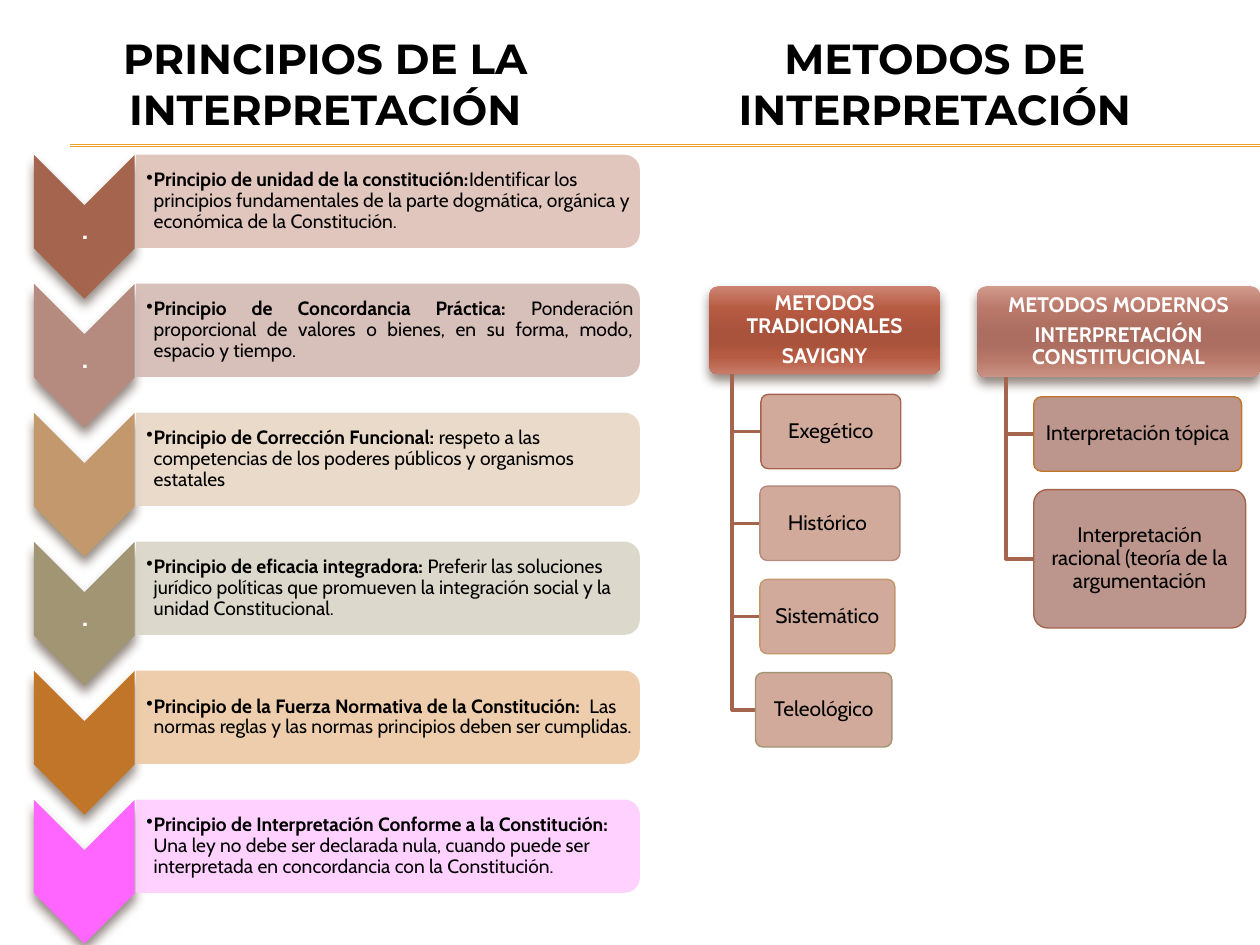
from lxml.etree import SubElement
from pptx import Presentation
from pptx.dml.color import RGBColor
from pptx.enum.shapes import MSO_CONNECTOR, MSO_SHAPE
from pptx.enum.text import MSO_ANCHOR as Anchor, MSO_AUTO_SIZE, PP_ALIGN as Align
from pptx.oxml.ns import qn
from pptx.util import Cm, Pt

BLACK = RGBColor(0x00, 0x00, 0x00)
WHITE = RGBColor(0xFF, 0xFF, 0xFF)
GOLD = RGBColor(0xF0, 0xA2, 0x2E)
BROWN = RGBColor(0xA5, 0x64, 0x4E)
ROSE = RGBColor(0xB5, 0x8B, 0x80)
TAN = RGBColor(0xC3, 0x98, 0x6D)
OLIVE = RGBColor(0xA1, 0x95, 0x74)
ORANGE = RGBColor(0xC1, 0x75, 0x29)
MAGENTA = RGBColor(0xFF, 0x66, 0xFF)
SALMON = RGBColor(0xCC, 0xA1, 0x92)
SHADOW = RGBColor(0x4E, 0x3B, 0x30)
PALE = [RGBColor.from_string(code) for code in
        ("DDC0B6", "D3B9B3", "E7D6C5", "D9D5C7", "ECC8A4", "FFCCFF")]
STOPS = (0, 25, 50, 65, 80, 100)
RED_GRADIENT = [RGBColor.from_string(code) for code in
                ("CD8473", "B75B42", "AA533C", "AA533C", "B65B42", "C77D6B")]
ROSE_GRADIENT = [RGBColor.from_string(code) for code in
                 ("D09A8D", "B97869", "AB6E60", "AB6E60", "B87868", "CA9386")]

BODY_FONT, TITLE_FONT = "Cabin", "Montserrat"
ROW_PITCH = 2.6

# Chevron colour, mark on the chevron, heading, explanation, alignment
PRINCIPLES = [
    (BROWN, ".", "Principio de unidad de la constitución:",
     "Identificar los principios fundamentales de la parte dogmática, "
     "orgánica y económica de la Constitución.", Align.LEFT),
    (ROSE, ".", "Principio de Concordancia Práctica: ",
     "Ponderación proporcional de valores o bienes, en su forma, modo, "
     "espacio y tiempo.", Align.JUSTIFY),
    (TAN, "", "Principio de Corrección Funcional: ",
     "respeto a las competencias de los poderes públicos y organismos "
     "estatales", Align.LEFT),
    (OLIVE, ".", "Principio de eficacia integradora: ",
     "Preferir las soluciones jurídico políticas que promueven la "
     "integración social y la unidad Constitucional.", Align.LEFT),
    (ORANGE, "", "Principio de la Fuerza Normativa de la Constitución:  ",
     "Las normas reglas y las normas principios deben ser cumplidas.", Align.LEFT),
    (MAGENTA, "", "Principio de Interpretación Conforme a la Constitución: ",
     "Una ley no debe ser declarada nula, cuando puede ser interpretada en "
     "concordancia con la Constitución.", Align.LEFT),
]

# Header text, box, gradient, trunk x, child fill, children (text, box, line colour)
METHODS = [
    (["METODOS TRADICIONALES", "SAVIGNY"], (14.3, 5.77, 4.65, 1.78),
     RED_GRADIENT, 14.76, SALMON,
     [("Exegético", (15.34, 7.95, 2.82, 1.5), BROWN),
      ("Histórico ", (15.32, 9.8, 2.82, 1.5), ROSE),
      ("Sistemático", (15.32, 11.68, 2.72, 1.5), TAN),
      ("Teleológico", (15.23, 13.56, 2.75, 1.5), OLIVE)]),
    (["METODOS MODERNOS", "INTERPRETACIÓN CONSTITUCIONAL"], (19.7, 5.77, 5.7, 1.84),
     ROSE_GRADIENT, 20.28, ROSE,
     [("Interpretación tópica", (20.84, 8.0, 4.19, 1.5), ORANGE),
      ("Interpretación racional (teoría de la argumentación",
       (20.84, 9.87, 4.27, 2.79), BROWN)]),
]


def write_text(shape, paragraphs, size=12, font=BODY_FONT, color=BLACK, bold=False,
               align=Align.CENTER, anchor=Anchor.MIDDLE, insets=(0.08, 0.05, 0.08, 0.05),
               line_spacing=0.9, space_after=0, bullet=False):
    """Fill a shape; each paragraph is a string or a list of (text, bold)."""
    frame = shape.text_frame
    frame.word_wrap = True
    frame.auto_size = MSO_AUTO_SIZE.NONE
    frame.vertical_anchor = anchor
    (frame.margin_left, frame.margin_top,
     frame.margin_right, frame.margin_bottom) = map(Cm, insets)
    for index, content in enumerate(paragraphs):
        paragraph = frame.add_paragraph() if index else frame.paragraphs[0]
        paragraph.alignment = align
        paragraph.line_spacing = line_spacing
        paragraph.space_after = Pt(space_after)
        runs = [(content, bold)] if isinstance(content, str) else content
        for text, is_bold in runs:
            run = paragraph.add_run()
            run.text = text
            run.font.name, run.font.size, run.font.bold = font, Pt(size), is_bold
            run.font.color.rgb = color
        if bullet:
            properties = paragraph._p.get_or_add_pPr()
            properties.set("marL", str(Cm(0.15)))
            properties.set("indent", str(-Cm(0.15)))
            SubElement(properties, qn("a:buChar")).set("char", "•")


def add_textbox(slide, box, paragraphs, **text_format):
    shape = slide.shapes.add_textbox(*map(Cm, box))
    write_text(shape, paragraphs, **text_format)


def add_block(slide, kind, box, fill=None, gradient=None, line=None, opacity=100,
              rotation=0, shadow=False):
    shape = slide.shapes.add_shape(kind, *map(Cm, box))
    shape.rotation = rotation
    properties = shape._element.spPr
    if gradient:
        shape.fill.gradient()
        shape.fill.gradient_angle = 270
        stops = properties.find(".//" + qn("a:gsLst"))
        stops.clear()
        for position, color in zip(STOPS, gradient):
            stop = SubElement(stops, qn("a:gs"), pos=str(position * 1000))
            SubElement(stop, qn("a:srgbClr"), val=str(color))
    else:
        shape.fill.solid()
        shape.fill.fore_color.rgb = fill
        if opacity < 100:
            color = properties.find(qn("a:solidFill"))[0]
            SubElement(color, qn("a:alpha"), val=str(opacity * 1000))
    if line is None:
        shape.line.fill.background()
    else:
        shape.line.color.rgb = line
        shape.line.width = Pt(0.79)
    shape.shadow.inherit = False
    if shadow:
        effects = properties.find(qn("a:effectLst"))
        outer = SubElement(effects, qn("a:outerShdw"), blurRad=str(Pt(6)),
                           dist=str(Pt(4)), dir="5400000", rotWithShape="0")
        color = SubElement(outer, qn("a:srgbClr"), val=str(SHADOW))
        SubElement(color, qn("a:alpha"), val="60000")
    return shape


def add_rule(slide, y):
    rule = slide.shapes.add_connector(MSO_CONNECTOR.STRAIGHT,
                                      Cm(1.42), Cm(y), Cm(25.4), Cm(y))
    rule.line.color.rgb = GOLD
    rule.line.width = Pt(0.75)
    SubElement(rule._element.spPr, qn("a:effectLst"))


def add_branch(slide, x, top, end_x, end_y):
    builder = slide.shapes.build_freeform(Cm(x), Cm(top))
    builder.add_line_segments([(Cm(x), Cm(end_y)), (Cm(end_x), Cm(end_y))], close=False)
    branch = builder.convert_to_shape()
    branch.fill.background()
    branch.line.color.rgb = BROWN
    branch.line.width = Pt(2)
    branch.shadow.inherit = False


def add_principle(slide, row, color, mark, heading, explanation, align):
    offset = row * ROW_PITCH
    add_block(slide, MSO_SHAPE.CHEVRON, (0.25, 3.56 + offset, 2.9, 2.03),
              fill=color, rotation=90, shadow=True)
    if mark:
        add_textbox(slide, (0.7, 4.14 + offset, 2.03, 0.87), [mark], size=22,
                    color=WHITE, insets=(0.05,) * 4)
    add_block(slide, MSO_SHAPE.ROUND_2_SAME_RECTANGLE, (6.88, -1.02 + offset, 1.88, 10.16),
              fill=PALE[row], opacity=90, rotation=90)
    add_textbox(slide, (2.72, 3.21 + offset, 10.08, 1.7),
                [[(heading, True), (explanation, False)]], size=11, align=align,
                insets=(0.23, 0.03, 0.03, 0.03), bullet=True)


def add_method(slide, header, box, gradient, trunk_x, child_fill, children):
    rounded = MSO_SHAPE.ROUNDED_RECTANGLE
    root = add_block(slide, rounded, box, gradient=gradient, shadow=True)
    root.adjustments[0] = 0.1
    write_text(root, header, color=WHITE, bold=True, space_after=4)
    for text, child_box, line in children:
        left, top, _, height = child_box
        add_branch(slide, trunk_x, box[1] + box[3], left, top + height / 2)
        child = add_block(slide, rounded, child_box, fill=child_fill, line=line, opacity=90)
        child.adjustments[0] = 0.1
        write_text(child, [text])


def main():
    presentation = Presentation()
    presentation.slide_width, presentation.slide_height = Cm(25.4), Cm(19.05)
    slide = presentation.slides.add_slide(presentation.slide_layouts[5])

    # Headings and the double rule below them
    heading_format = dict(size=24, font=TITLE_FONT, bold=True, anchor=Anchor.TOP,
                          insets=(0.25, 0.13, 0.25, 0.13), line_spacing=1)
    title = slide.shapes.title
    title.left, title.top, title.width, title.height = map(Cm, (0, 0.53, 13.11, 2.31))
    write_text(title, ["PRINCIPIOS DE LA INTERPRETACIÓN"], **heading_format)
    add_textbox(slide, (12.29, 0.53, 13.11, 2.31), ["METODOS DE INTERPRETACIÓN"],
                **heading_format)
    for y in (2.92, 2.95):
        add_rule(slide, y)

    # Left: principles as a chevron list
    for row, principle in enumerate(PRINCIPLES):
        add_principle(slide, row, *principle)

    # Right: methods as two hierarchies
    for method in METHODS:
        add_method(slide, *method)

    presentation.save("out.pptx")


if __name__ == "__main__":
    main()
